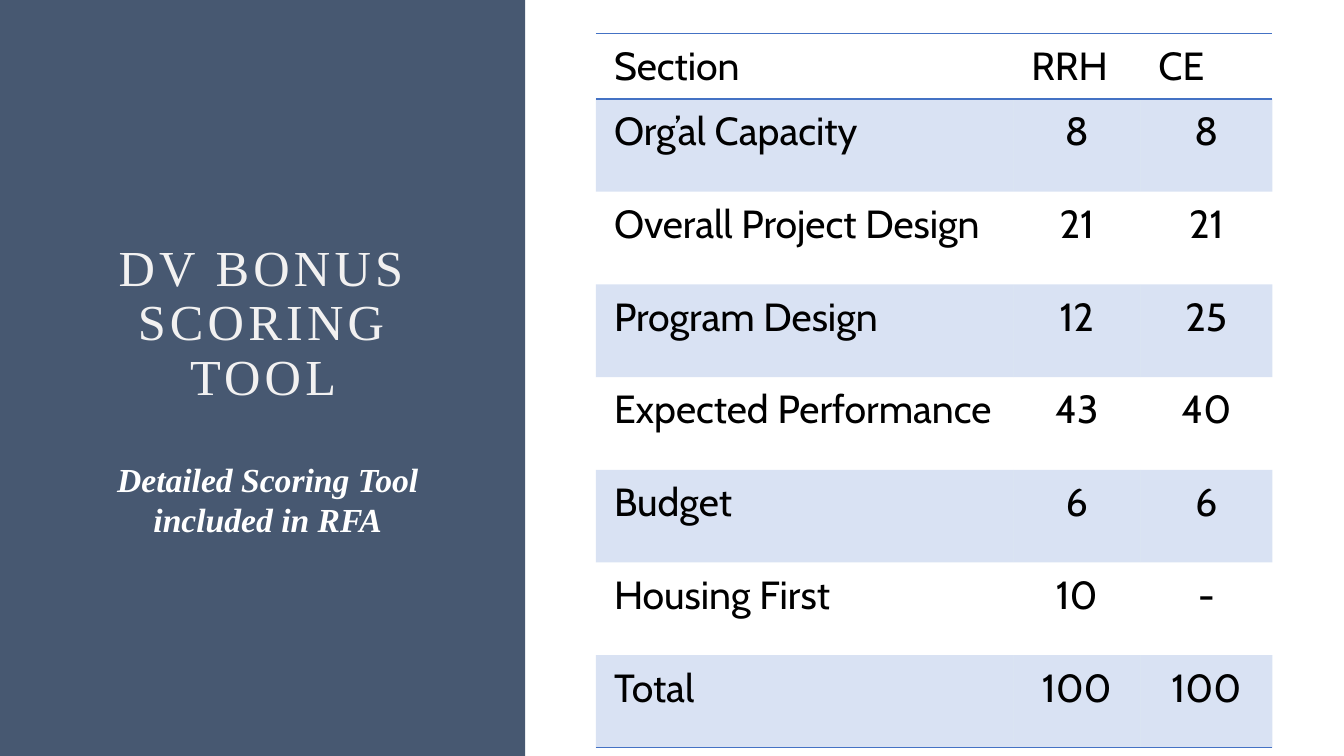
import pptx
import pptx.dml.color
import pptx.enum.shapes
import pptx.enum.text
import pptx.oxml
import pptx.oxml.ns
import pptx.util

PX = 9144  # EMU per px, 100 px to the inch
COLORS = {"panel": "475871", "title": "F2F1F1", "subtitle": "FFFFFF",
          "text": "000000", "accent": "4472C4"}
NO_STYLE = "{2D5ABB26-0587-4C30-8999-92F81FD0307C}"
NS = pptx.oxml.ns.nsdecls("a")
ALIGN = pptx.enum.text.PP_ALIGN
ANCHOR = pptx.enum.text.MSO_ANCHOR


def rgb(name):
    return pptx.dml.color.RGBColor.from_string(COLORS[name])


def set_text(sp, text, box, anchor, size, color, bold):
    """Move a placeholder to box, fill it with centred text and return its paragraph."""
    sp.left, sp.top, sp.width, sp.height = (v * PX for v in box)
    tf = sp.text_frame
    tf.text = text
    tf.word_wrap = True
    tf.auto_size = pptx.enum.text.MSO_AUTO_SIZE.NONE
    tf.vertical_anchor = anchor
    p = tf.paragraphs[0]
    p.alignment = ALIGN.CENTER
    p.font.name = "Times New Roman"
    p.font.size = pptx.util.Pt(size)
    p.font.color.rgb = rgb(color)
    p.font.bold = p.font.italic = bold
    return p


prs = pptx.Presentation()
prs.slide_width, prs.slide_height = 1333 * PX, 750 * PX
s = prs.slides.add_slide(prs.slide_layouts.get_by_name("Section Header"))

# Left panel, behind the placeholders
panel = s.shapes.add_shape(pptx.enum.shapes.MSO_SHAPE.RECTANGLE, 0, 0, 521 * PX, 750 * PX)
panel.shadow.inherit = False
panel.fill.solid()
panel.fill.fore_color.rgb = rgb("panel")
panel.line.fill.background()
s.shapes.title.element.addprevious(panel.element)

p = set_text(s.shapes.title, "DV BONUS SCORING TOOL", (94, 75, 334, 333),
             ANCHOR.BOTTOM, 36, "title", False)
p.line_spacing = 0.9
p.runs[0].font._element.set("spc", "300")

p = set_text(s.placeholders[1], "Detailed Scoring Tool included in RFA", (102, 450, 327, 225),
             ANCHOR.TOP, 24, "subtitle", True)
p.space_before = pptx.util.Pt(10)

# Score table
rows = [
    ("Section", "RRH", "CE"),
    ("Org’al Capacity", "8", "8"),
    ("Overall Project Design", "21", "21"),
    ("Program Design", "12", "25"),
    ("Expected Performance", "43", "40"),
    ("Budget", "6", "6"),
    ("Housing First", "10", "-"),
    ("Total", "100", "100"),
]
widths = [414, 126, 131]
heights = [62] + [92] * (len(rows) - 1)
frame = s.shapes.add_table(len(rows), len(widths), 591 * PX, 33 * PX,
                           sum(widths) * PX, sum(heights) * PX)
table = frame.table
table.first_row = table.horz_banding = False
table._tbl.tblPr.find(pptx.oxml.ns.qn("a:tableStyleId")).text = NO_STYLE
for col, width in zip(table.columns, widths):
    col.width = width * PX
for row, height in zip(table.rows, heights):
    row.height = height * PX

for i, values in enumerate(rows):
    edges = {0: ("lnT", "lnB"), len(rows) - 1: ("lnB",)}.get(i, ())
    for j, value in enumerate(values):
        cell = table.cell(i, j)
        cell.text = value
        cell.margin_left = cell.margin_right = 18 * PX
        cell.margin_top = cell.margin_bottom = 9 * PX
        p = cell.text_frame.paragraphs[0]
        p.alignment = ALIGN.CENTER if i and j else ALIGN.LEFT
        p.font.name = "Cabin"
        p.font.size = pptx.util.Pt(28)
        p.font.color.rgb = rgb("text")

        tcPr = cell._tc.get_or_add_tcPr()
        for edge in edges:
            tcPr.append(pptx.oxml.parse_xml(
                f'<a:{edge} {NS} w="12700"><a:solidFill><a:srgbClr val="{COLORS["accent"]}"/>'
                f'</a:solidFill></a:{edge}>'))
        if i % 2:
            cell.fill.solid()
            cell.fill.fore_color.rgb = rgb("accent")
            tint = tcPr.find(pptx.oxml.ns.qn("a:solidFill"))[0]
            tint.append(pptx.oxml.parse_xml(f'<a:alpha {NS} val="20000"/>'))
        else:
            cell.fill.background()

prs.save("out.pptx")
